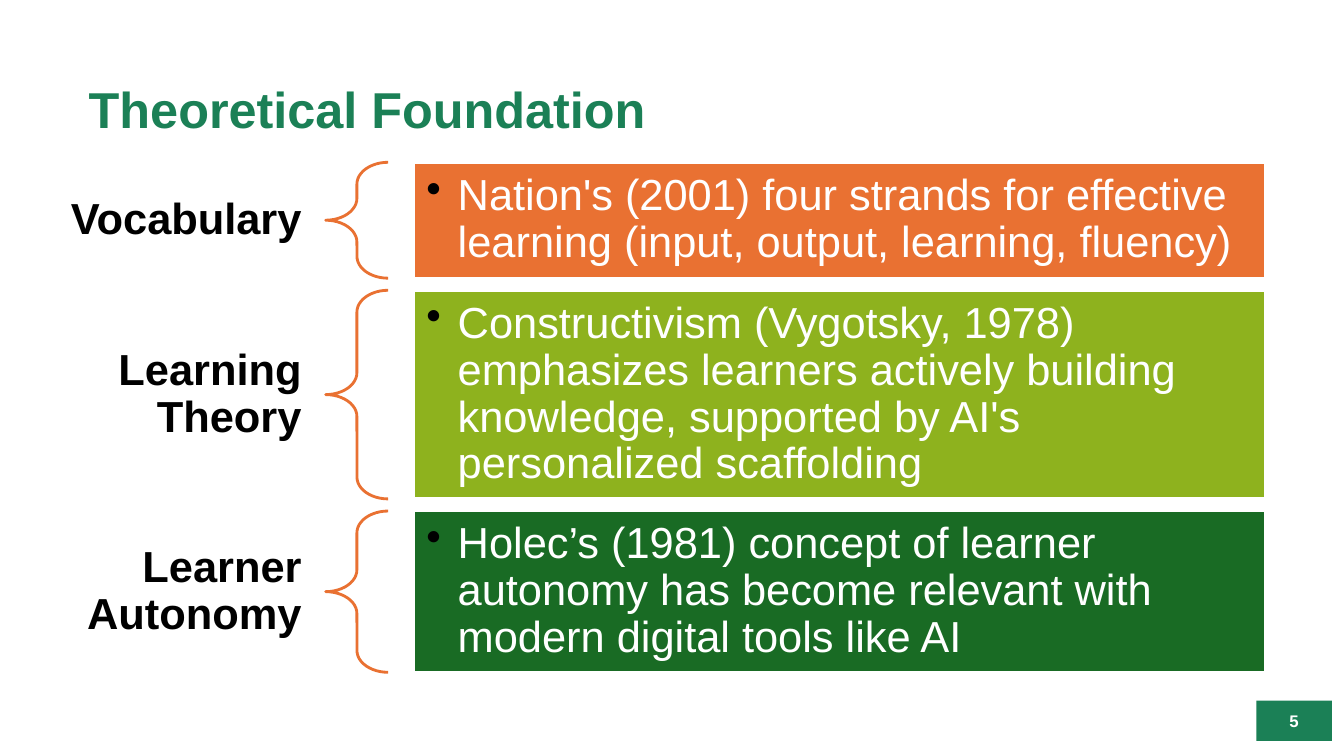
"""Build the Theoretical Foundation slide: three braced topics with their key ideas."""
from lxml import etree
from pptx import Presentation
from pptx.dml.color import RGBColor
from pptx.enum import shapes, text
from pptx.oxml import ns
from pptx.util import Inches, Pt

GREEN = RGBColor(0x1B, 0x80, 0x56)
ORANGE = RGBColor(0xE9, 0x71, 0x32)
LIME = RGBColor(0x8E, 0xB2, 0x1E)
FOREST = RGBColor(0x19, 0x6B, 0x24)
WHITE = RGBColor(0xFF, 0xFF, 0xFF)
BLACK = RGBColor(0, 0, 0)

TITLE = "Theoretical Foundation"
PAGE = "5"
TOPICS = [
    ("Vocabulary", "Nation's (2001) four strands for effective learning "
     "(input, output, learning, fluency)", ORANGE, 1.15),
    ("Learning Theory", "Constructivism (Vygotsky, 1978) emphasizes learners actively "
     "building knowledge, supported by AI's personalized scaffolding", LIME, 2.07),
    ("Learner Autonomy", "Holec’s (1981) concept of learner autonomy has become "
     "relevant with modern digital tools like AI", FOREST, 1.6),
]
LABEL_COLUMN = (0.12, 3.11)
BRACE_COLUMN = (3.23, 0.62)
IDEA_COLUMN = (4.1, 8.45)
FIRST_ROW, ROW_GAP = 1.61, 0.12
INDENT = Inches(0.31)


def cell(column, top, height):
    left, width = column
    return [Inches(length) for length in (left, top, width, height)]


def write(part, words, size, color, bold, align, insets=(0.1, 0.05), spacing=None):
    frame = part.text_frame
    frame.word_wrap = True
    frame.auto_size = text.MSO_AUTO_SIZE.NONE
    frame.vertical_anchor = text.MSO_ANCHOR.MIDDLE
    frame.margin_left = frame.margin_right = Inches(insets[0])
    frame.margin_top = frame.margin_bottom = Inches(insets[1])
    frame.text = words
    paragraph = frame.paragraphs[0]
    paragraph.alignment = align
    paragraph.line_spacing = spacing
    font = paragraph.font
    font.name, font.size, font.bold = "Arial", Pt(size), bold
    font.color.rgb = color
    return paragraph


def add_bullet(paragraph, color):
    properties = paragraph._p.get_or_add_pPr()
    properties.set("marL", str(INDENT))
    properties.set("indent", str(-INDENT))
    bullet_color = etree.Element(ns.qn("a:buClr"))
    etree.SubElement(bullet_color, ns.qn("a:srgbClr"), val=str(color))
    bullet = etree.Element(ns.qn("a:buChar"), char="•")
    font_at = properties.index(properties.find(ns.qn("a:defRPr")))
    properties.insert(font_at, bullet)
    properties.insert(font_at, bullet_color)


def add_block(slide, preset, place, fill=None, line=None):
    block = slide.shapes.add_shape(preset, *place)
    block.shadow.inherit = False
    if fill is None:
        block.fill.background()
    else:
        block.fill.solid()
        block.fill.fore_color.rgb = fill
    if line is None:
        block.line.fill.background()
    else:
        block.line.color.rgb = line
        block.line.width = Pt(2)
    return block


def main():
    deck = Presentation()
    deck.slide_width, deck.slide_height = Inches(13.33), Inches(7.5)
    slide = deck.slides.add_slide(deck.slide_layouts[5])
    preset, align = shapes.MSO_SHAPE, text.PP_ALIGN

    title = slide.shapes.title
    title.left, title.top, title.width, title.height = cell((0.78, 11.5), 0.39, 1.45)
    write(title, TITLE, 36, GREEN, True, align.JUSTIFY, spacing=0.9)

    page = add_block(slide, preset.RECTANGLE, cell((12.46, 0.75), 6.95, 0.4), GREEN)
    write(page, PAGE, 12, WHITE, True, align.CENTER)

    top = FIRST_ROW
    for topic, idea, color, height in TOPICS:
        label = slide.shapes.add_textbox(*cell(LABEL_COLUMN, top, height))
        write(label, topic, 31, BLACK, True, align.RIGHT, (0.24, 0.09), 0.9)

        brace = add_block(slide, preset.LEFT_BRACE, cell(BRACE_COLUMN, top, height), line=ORANGE)
        brace.adjustments[0] = 0.35

        panel = add_block(slide, preset.RECTANGLE, cell(IDEA_COLUMN, top, height), color, WHITE)
        add_bullet(write(panel, idea, 31, WHITE, False, align.LEFT, (0.13, 0.13), 0.9), BLACK)
        top += height + ROW_GAP

    deck.save("out.pptx")


if __name__ == "__main__":
    main()
